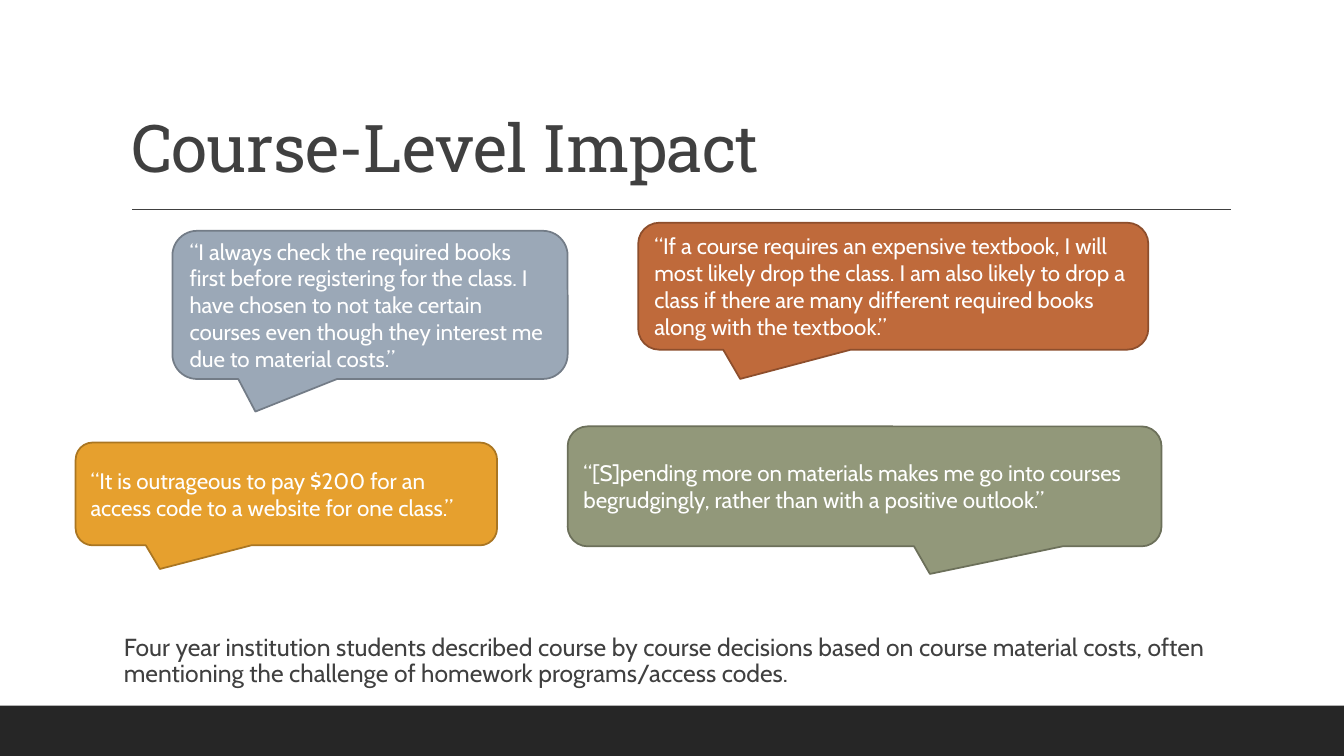
from pptx import Presentation
from pptx.dml.color import RGBColor
from pptx.enum import shapes, text
from pptx.oxml.ns import qn
from pptx.util import Inches, Pt
from lxml import etree

COLORS = {
    "ink": "404040", "footer": "262626", "white": "FFFFFF",
    "blue": "9BA8B7", "blue_edge": "737C87",
    "rust": "BF6A3B", "rust_edge": "8D4E2C",
    "sage": "92987A", "sage_edge": "6C705A",
    "amber": "E6A02E", "amber_edge": "AA7622",
}
WIDTH, HEIGHT = 13.33, 7.5

# box, colour, tail tip as shares of the box from its centre, quote
QUOTES = [
    ((1.71, 2.29, 3.92, 1.47), "blue", (-0.29, 0.72),
     "“I always check the required books first before registering for the class. "
     "I have chosen to not take certain courses even though they interest me "
     "due to material costs.”"),
    ((6.33, 2.21, 5.06, 1.26), "rust", (-0.3, 0.73),
     "“If a course requires an expensive textbook, I will most likely drop the class. "
     "I am also likely to drop a class if there are many different required books "
     "along with the textbook.”"),
    ((5.63, 4.23, 5.89, 1.19), "sage", (0.11, 0.73),
     "“[S]pending more on materials makes me go into courses begrudgingly, "
     "rather than with a positive outlook.”"),
    ((0.75, 4.39, 4.18, 1.02), "amber", (-0.3, 0.73),
     "“It is outrageous to pay $200 for an access code to a website for one class.”"),
]


def color(name):
    return RGBColor.from_string(COLORS[name])


def inches(box):
    return [Inches(length) for length in box]


def write(para, words, size, ink, font="Cabin"):
    span = para.add_run()
    span.text = words
    span.font.name = font
    span.font.size = Pt(size)
    span.font.color.rgb = color(ink)
    return span


def add_frame(page):
    """Draw the footer band and the rule under the title."""
    band = page.shapes.add_shape(
        shapes.MSO_SHAPE.RECTANGLE, *inches((0, HEIGHT - 0.5, WIDTH, 0.5)))
    band.shadow.inherit = False
    band.fill.solid()
    band.fill.fore_color.rgb = color("footer")
    band.line.fill.background()
    rule = page.shapes.add_connector(
        shapes.MSO_CONNECTOR.STRAIGHT, *inches((1.31, 2.08, 12.21, 2.08)))
    rule.line.color.rgb = color("ink")
    rule.line.width = Pt(1)
    etree.SubElement(rule._element.spPr, qn("a:effectLst"))


def add_title(page, box, words):
    title = page.shapes.title
    title.left, title.top, title.width, title.height = inches(box)
    frame = title.text_frame
    frame.vertical_anchor = text.MSO_ANCHOR.BOTTOM
    frame.auto_size = text.MSO_AUTO_SIZE.NONE
    para = frame.paragraphs[0]
    para.alignment = text.PP_ALIGN.LEFT
    para.line_spacing = 0.9
    span = write(para, words, 47, "ink", "Roboto Slab")
    span.font._element.set("spc", "-50")


def add_quote(page, box, fill, tail, words):
    bubble = page.shapes.add_shape(
        shapes.MSO_SHAPE.ROUNDED_RECTANGULAR_CALLOUT, *inches(box))
    bubble.adjustments[0], bubble.adjustments[1] = tail
    bubble.shadow.inherit = False
    bubble.fill.solid()
    bubble.fill.fore_color.rgb = color(fill)
    bubble.line.color.rgb = color(fill + "_edge")
    bubble.line.width = Pt(1.25)
    frame = bubble.text_frame
    frame.word_wrap = True
    frame.vertical_anchor = text.MSO_ANCHOR.MIDDLE
    para = frame.paragraphs[0]
    para.alignment = text.PP_ALIGN.LEFT
    write(para, words, 16, "white")


def add_summary(page, box, words):
    frame = page.shapes.add_textbox(*inches(box)).text_frame
    frame.word_wrap = True
    frame.margin_left = Inches(0.1)
    frame.margin_right = 0
    para = frame.paragraphs[0]
    para.line_spacing = 0.9
    write(para, words, 17.6, "ink")


def main():
    deck = Presentation()
    deck.slide_width, deck.slide_height = inches((WIDTH, HEIGHT))
    page = deck.slides.add_slide(deck.slide_layouts[5])
    add_frame(page)
    add_title(page, (1.2, 0.31, 11, 1.59), "Course-Level Impact")
    add_summary(page, (1.13, 6.25, 11, 0.65),
                "Four year institution students described course by course decisions "
                "based on course material costs, often mentioning the challenge of "
                "homework programs/access codes.")
    for quote in QUOTES:
        add_quote(page, *quote)
    deck.save("out.pptx")


if __name__ == "__main__":
    main()
